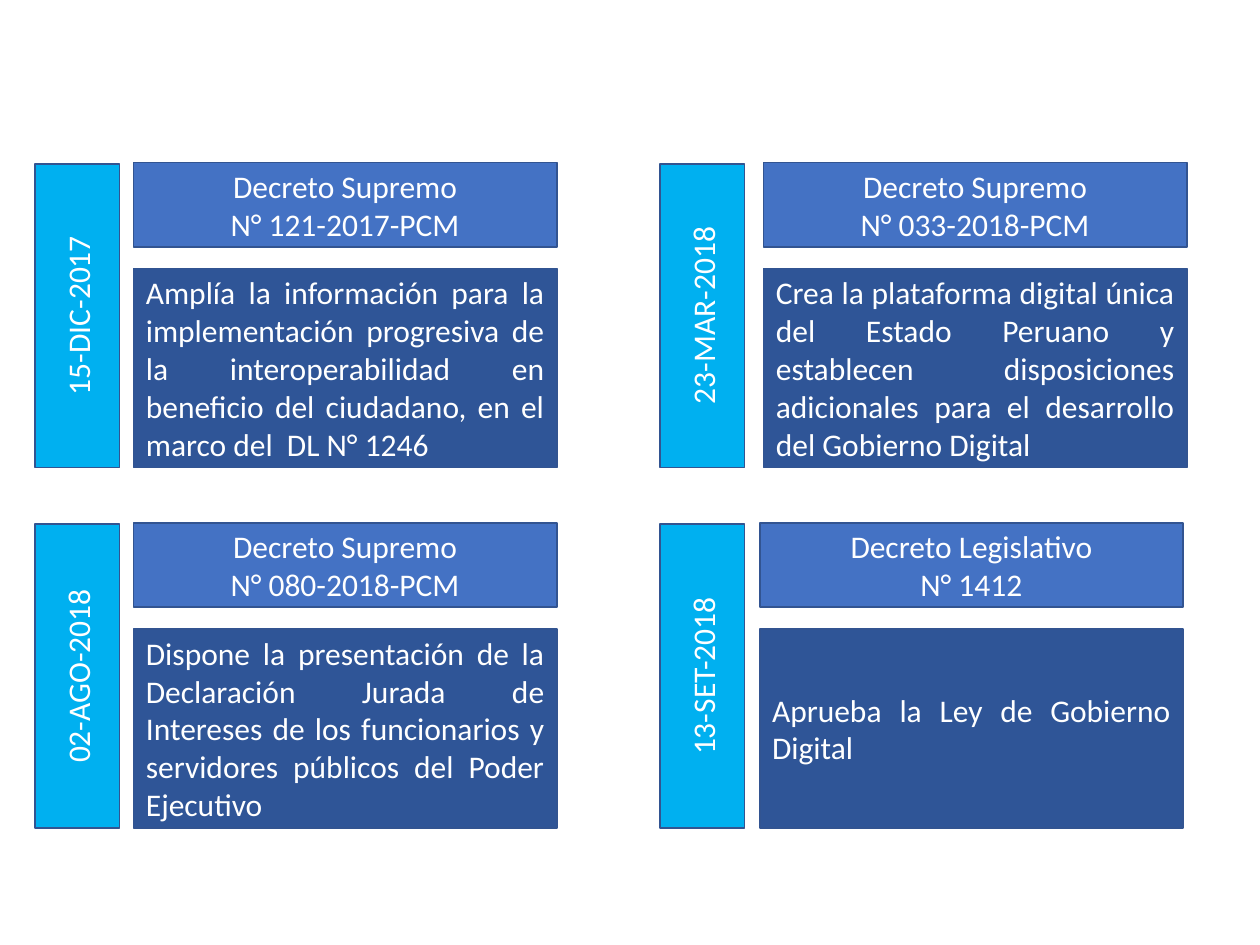
"""Build a slide with four Peruvian digital government decrees."""
from dataclasses import dataclass

from pptx import Presentation
from pptx.dml.color import RGBColor
from pptx.enum.shapes import MSO_SHAPE
from pptx.enum.text import MSO_ANCHOR, PP_ALIGN
from pptx.slide import Slide
from pptx.util import Pt

COLORS = {
    "heading": "4472C4",
    "summary": "2F5597",
    "date": "00B0F0",
    "border": "325491",
    "text": "FFFFFF",
}
BAND = 48.24
PANEL_WIDTH = 241.92
SUMMARY_OFFSET, SUMMARY_HEIGHT = 60.48, 113.76
DATE_LENGTH, DATE_OFFSET = 173.52, 63.36
FIRST_ROW, SECOND_ROW = 92.88, 298.8
LEFT_DATE, RIGHT_DATE = -42.48, 314.64


@dataclass(frozen=True)
class Box:
    left: float
    top: float
    width: float
    height: float
    rotation: float = 0


@dataclass(frozen=True)
class Decree:
    date: str
    heading: tuple[str, str]
    summary: str
    date_left: float
    panel_left: float
    top: float


DECREES = [
    Decree("15-DIC-2017", ("Decreto Supremo", "N° 121-2017-PCM"),
           "Amplía la información para la implementación progresiva de la "
           "interoperabilidad en beneficio del ciudadano, en el marco del  DL N° 1246",
           LEFT_DATE, 76.32, FIRST_ROW),
    Decree("23-MAR-2018", ("Decreto Supremo", "N° 033-2018-PCM"),
           "Crea la plataforma digital única del Estado Peruano y establecen "
           "disposiciones adicionales para el desarrollo del Gobierno Digital",
           RIGHT_DATE, 436.32, FIRST_ROW),
    Decree("02-AGO-2018", ("Decreto Supremo", "N° 080-2018-PCM"),
           "Dispone la presentación de la Declaración Jurada de Intereses de los "
           "funcionarios y servidores públicos del Poder Ejecutivo",
           LEFT_DATE, 76.32, SECOND_ROW),
    Decree("13-SET-2018", ("Decreto Legislativo", "N° 1412"),
           "Aprueba la Ley de Gobierno Digital",
           RIGHT_DATE, 434.16, SECOND_ROW),
]


def draw_box(slide: Slide, box: Box, role: str, lines: tuple[str, ...],
             alignment: PP_ALIGN = PP_ALIGN.CENTER) -> None:
    panel = slide.shapes.add_shape(
        MSO_SHAPE.RECTANGLE, Pt(box.left), Pt(box.top), Pt(box.width), Pt(box.height))
    panel.rotation = box.rotation
    panel.shadow.inherit = False
    panel.fill.solid()
    panel.fill.fore_color.rgb = RGBColor.from_string(COLORS[role])
    panel.line.color.rgb = RGBColor.from_string(COLORS["border"])
    panel.line.width = Pt(1)
    frame = panel.text_frame
    frame.word_wrap = True
    frame.vertical_anchor = MSO_ANCHOR.MIDDLE
    for index, line in enumerate(lines):
        paragraph = frame.add_paragraph() if index else frame.paragraphs[0]
        paragraph.alignment = alignment
        run = paragraph.add_run()
        run.text = line
        run.font.name = "Calibri"
        run.font.size = Pt(18)
        run.font.color.rgb = RGBColor.from_string(COLORS["text"])


def draw_decree(slide: Slide, decree: Decree) -> None:
    draw_box(slide, Box(decree.panel_left, decree.top, PANEL_WIDTH, BAND),
             "heading", decree.heading)
    draw_box(slide, Box(decree.panel_left, decree.top + SUMMARY_OFFSET,
                        PANEL_WIDTH, SUMMARY_HEIGHT),
             "summary", (decree.summary,), PP_ALIGN.JUSTIFY)
    draw_box(slide, Box(decree.date_left, decree.top + DATE_OFFSET,
                        DATE_LENGTH, BAND, 270),
             "date", (decree.date,))


def main() -> None:
    presentation = Presentation()
    presentation.slide_width = Pt(720)
    presentation.slide_height = Pt(540)
    slide = presentation.slides.add_slide(presentation.slide_layouts[6])
    for decree in DECREES:
        draw_decree(slide, decree)
    presentation.save("out.pptx")


if __name__ == "__main__":
    main()
